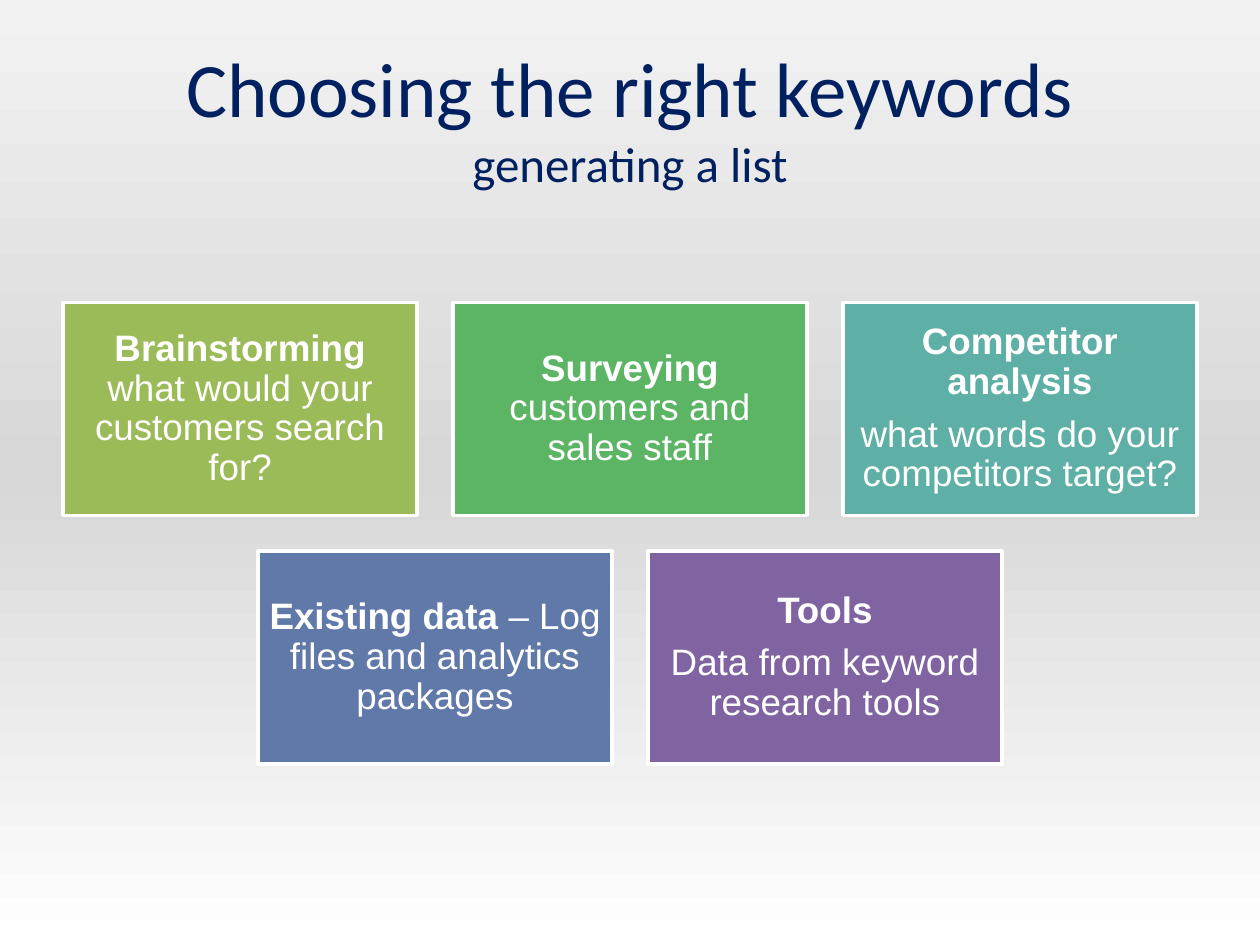
from copy import deepcopy

from pptx import Presentation
from pptx.dml.color import RGBColor
from pptx.enum.shapes import MSO_SHAPE as SHAPE
from pptx.enum.text import MSO_ANCHOR as ANCHOR, PP_ALIGN as ALIGN
from pptx.oxml.ns import qn
from pptx.util import Cm, Pt

COLORS = {
    "navy": "002060", "white": "FFFFFF",
    "bg_top": "F2F2F2", "bg_mid": "D7D7D7",
    "lime": "9BBB59", "green": "5CB565", "teal": "5EAFA6",
    "blue": "6179A8", "purple": "8064A2",
}

# Each card: fill, then paragraphs of (text, bold) runs
CARD_ROWS = [
    [
        ("lime", [[("Brainstorming", True), (" what would your customers search for?", False)]]),
        ("green", [[("Surveying", True), (" customers and sales staff", False)]]),
        ("teal", [[("Competitor analysis", True)],
                  [("what words do your competitors target?", False)]]),
    ],
    [
        ("blue", [[("Existing data ", True), ("– Log files and analytics packages", False)]]),
        ("purple", [[("Tools", True)], [("Data from keyword research tools", False)]]),
    ],
]

SLIDE_W, SLIDE_H = 25.4, 19.05
CARD_W, CARD_H, GAP, CARDS_TOP = 7.14, 4.29, 0.72, 6.1


def rgb(name):
    return RGBColor.from_string(COLORS[name])


def add_text(p, text, size=21, color="white", bold=False, font="Arial"):
    r = p.add_run()
    r.text = text
    r.font.name, r.font.size, r.font.bold = font, Pt(size), bold
    r.font.color.rgb = rgb(color)
    return r


class SlideBuilder:
    def __init__(self, s, title_font="Calibri", inset=0.23):
        self.s = s
        self.title_font = title_font
        self.inset = Cm(inset)

    def background(self, stops):
        fill = self.s.background.fill
        fill.gradient()
        fill.gradient_angle = 270
        gs_list = self.s.element.find(".//" + qn("a:gsLst"))
        while len(gs_list) < len(stops):
            gs_list.append(deepcopy(gs_list[0]))
        for stop, (position, color) in zip(fill.gradient_stops, stops):
            stop.position = position
            stop.color.rgb = rgb(color)

    def title(self, heading, subheading):
        sp = self.s.shapes.title
        sp.left, sp.top, sp.width, sp.height = Cm(1.27), Cm(0.76), Cm(22.86), Cm(3.18)
        tf = sp.text_frame
        tf.vertical_anchor = ANCHOR.MIDDLE
        p = tf.paragraphs[0]
        p.alignment = ALIGN.CENTER
        add_text(p, heading, size=44, color="navy", font=self.title_font)
        p.add_line_break()
        add_text(p, subheading, size=28, color="navy", font=self.title_font)

    def card(self, x, y, color, paragraphs):
        sp = self.s.shapes.add_shape(SHAPE.RECTANGLE, Cm(x), Cm(y), Cm(CARD_W), Cm(CARD_H))
        sp.shadow.inherit = False
        sp.fill.solid()
        sp.fill.fore_color.rgb = rgb(color)
        sp.line.color.rgb = rgb("white")
        sp.line.width = Pt(2)
        tf = sp.text_frame
        tf.word_wrap = True
        tf.vertical_anchor = ANCHOR.MIDDLE
        tf.margin_left = tf.margin_right = tf.margin_top = tf.margin_bottom = self.inset
        for i, runs in enumerate(paragraphs):
            p = tf.add_paragraph() if i else tf.paragraphs[0]
            p.alignment = ALIGN.CENTER
            p.line_spacing = 0.9
            if i:
                p.space_before = Pt(7.35)
            for text, bold in runs:
                add_text(p, text, bold=bold)


def main():
    prs = Presentation()
    prs.slide_width, prs.slide_height = Cm(SLIDE_W), Cm(SLIDE_H)
    builder = SlideBuilder(prs.slides.add_slide(prs.slide_layouts[5]))

    # Background and title
    builder.background([(0, "bg_top"), (0.5, "bg_mid"), (1, "white")])
    builder.title("Choosing the right keywords", "generating a list")

    # Rows of cards, each centred on the slide
    for row, cards in enumerate(CARD_ROWS):
        row_w = len(cards) * (CARD_W + GAP) - GAP
        left = (SLIDE_W - row_w) / 2
        for col, (color, paragraphs) in enumerate(cards):
            builder.card(left + col * (CARD_W + GAP), CARDS_TOP + row * (CARD_H + GAP),
                         color, paragraphs)

    prs.save("out.pptx")


if __name__ == "__main__":
    main()
